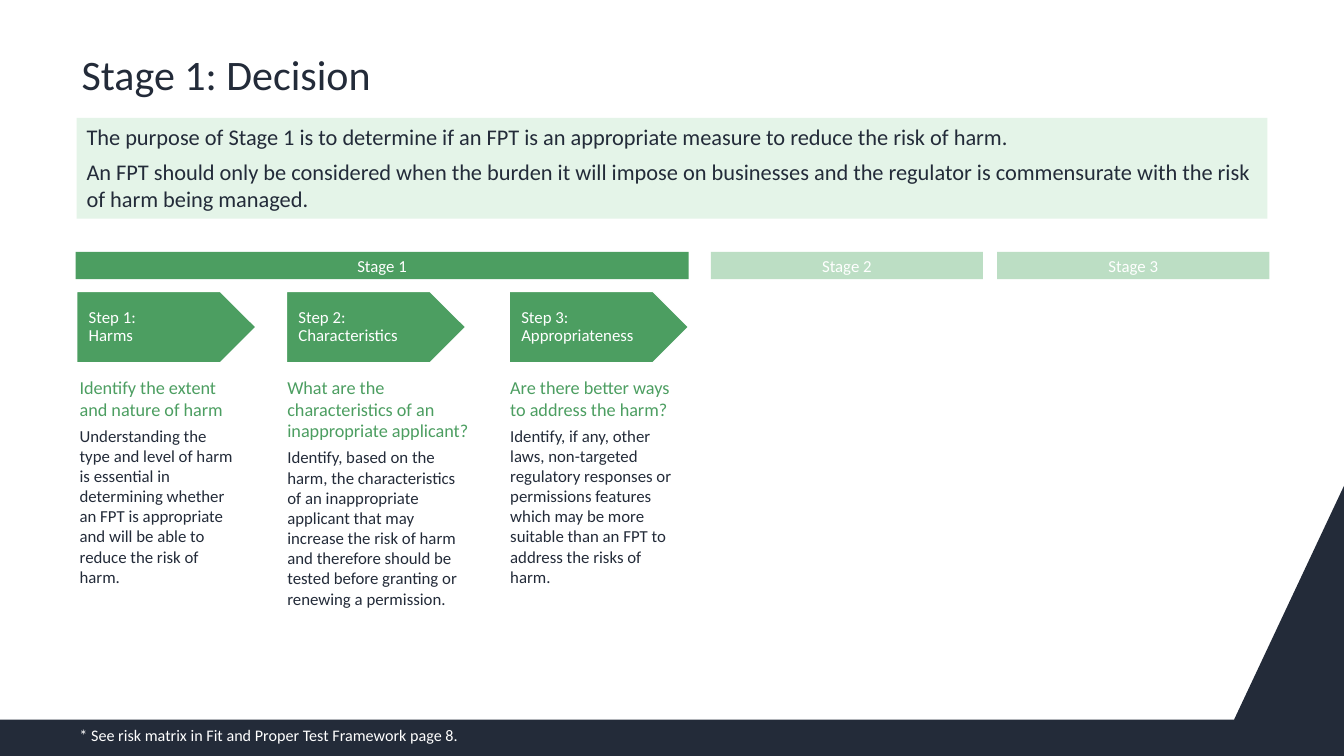
from pptx import Presentation
from pptx.dml.color import RGBColor
from pptx.enum import shapes, text
from pptx.util import Inches, Pt

NAVY = RGBColor(0x23, 0x2B, 0x39)
GREEN = RGBColor(0x4C, 0x9E, 0x61)
LIGHT_GREEN = RGBColor(0xBC, 0xDE, 0xC4)
PALE_GREEN = RGBColor(0xE4, 0xF4, 0xE8)
WHITE = RGBColor(0xFF, 0xFF, 0xFF)
RECT = shapes.MSO_SHAPE.RECTANGLE
TOP, MIDDLE, BOTTOM = text.MSO_ANCHOR.TOP, text.MSO_ANCHOR.MIDDLE, text.MSO_ANCHOR.BOTTOM
LEFT, CENTER = text.PP_ALIGN.LEFT, text.PP_ALIGN.CENTER


def add_block(kind, x, y, w, h, fill):
    sp = s.shapes.add_shape(kind, Inches(x), Inches(y), Inches(w), Inches(h))
    sp.shadow.inherit = False
    sp.fill.solid()
    sp.fill.fore_color.rgb = fill
    sp.line.fill.background()
    return sp


def write(sp, paras, anchor=TOP, insets=(0.1, 0.05, 0.1, 0.05), align=LEFT, after=0, spacing=1.0):
    tf = sp.text_frame
    tf.word_wrap = True
    tf.vertical_anchor = anchor
    tf.margin_left, tf.margin_top, tf.margin_right, tf.margin_bottom = map(Inches, insets)
    for i, (words, size, color) in enumerate(paras):
        p = tf.add_paragraph() if i else tf.paragraphs[0]
        p.text = words
        p.alignment = align
        p.space_after = Pt(after)
        p.line_spacing = spacing
        p.font.name = "Calibri"
        p.font.size = Pt(size)
        p.font.color.rgb = color


prs = Presentation()
prs.slide_width, prs.slide_height = Inches(13.33), Inches(7.5)
s = prs.slides.add_slide(prs.slide_layouts[6])

fb = s.shapes.build_freeform(Inches(12.24), Inches(7.14))
corners = [(0, 7.14), (0, 7.5), (13.33, 7.5), (13.33, 4.82)]
fb.add_line_segments([(Inches(x), Inches(y)) for x, y in corners])
footer = fb.convert_to_shape()
footer.shadow.inherit = False
footer.fill.solid()
footer.fill.fore_color.rgb = NAVY
footer.line.fill.background()

title = s.shapes.add_textbox(Inches(0.77), Inches(0.22), Inches(11.5), Inches(0.82))
write(title, [("Stage 1: Decision", 30, NAVY)], BOTTOM, (0.04, 0.05, 0.04, 0.05), spacing=0.9)

purpose = [
    "The purpose of Stage 1 is to determine if an FPT is an appropriate measure to reduce the risk of harm.",
    "An FPT should only be considered when the burden it will impose on businesses and the regulator "
    "is commensurate with the risk of harm being managed.",
]
sp = add_block(RECT, 0.76, 1.17, 11.81, 1, PALE_GREEN)
write(sp, [(words, 16, NAVY) for words in purpose], after=6)

stages = [("Stage 1", 0.75, 6.08, GREEN), ("Stage 2", 7.05, 2.7, LIGHT_GREEN), ("Stage 3", 9.89, 2.7, LIGHT_GREEN)]
for name, x, w, fill in stages:
    sp = add_block(RECT, x, 2.5, w, 0.27, fill)
    write(sp, [(name, 12, WHITE)], MIDDLE, align=CENTER)

steps = [
    ("Step 1: \vHarms", 0.76, 0.67, 1.8, "Identify the extent and nature of harm",
     "Understanding the type and level of harm is essential in determining whether an FPT is "
     "appropriate and will be able to reduce the risk of harm."),
    ("Step 2: Characteristics", 2.84, 2.73, 2.06, "What are the characteristics of an inappropriate applicant?",
     "Identify, based on the harm, the characteristics of an inappropriate applicant that may increase "
     "the risk of harm and therefore should be tested before granting or renewing a permission."),
    ("Step 3: Appropriateness", 5.05, 4.94, 1.89, "Are there better ways to address the harm?",
     "Identify, if any, other laws, non-targeted regulatory responses or permissions features which "
     "may be more suitable than an FPT to address the risks of harm."),
]
for name, arrow_x, x, w, question, detail in steps:
    sp = add_block(RECT, x, 3.61, w, 3.12, WHITE)
    write(sp, [(question, 13, GREEN), (detail, 12, NAVY)], insets=(0.12, 0.12, 0.12, 0.08), after=4)
    sp = add_block(shapes.MSO_SHAPE.PENTAGON, arrow_x, 2.89, 1.78, 0.71, GREEN)
    sp.line.color.rgb = WHITE
    sp.line.width = Pt(1)
    write(sp, [(name, 12, WHITE)], MIDDLE, (0.12, 0.02, 0.12, 0.02), spacing=0.9)

note = s.shapes.add_textbox(Inches(0.69), Inches(7.15), Inches(6.87), Inches(0.29))
write(note, [("* See risk matrix in Fit and Proper Test Framework page 8.", 11.5, WHITE)])

prs.save("out.pptx")
